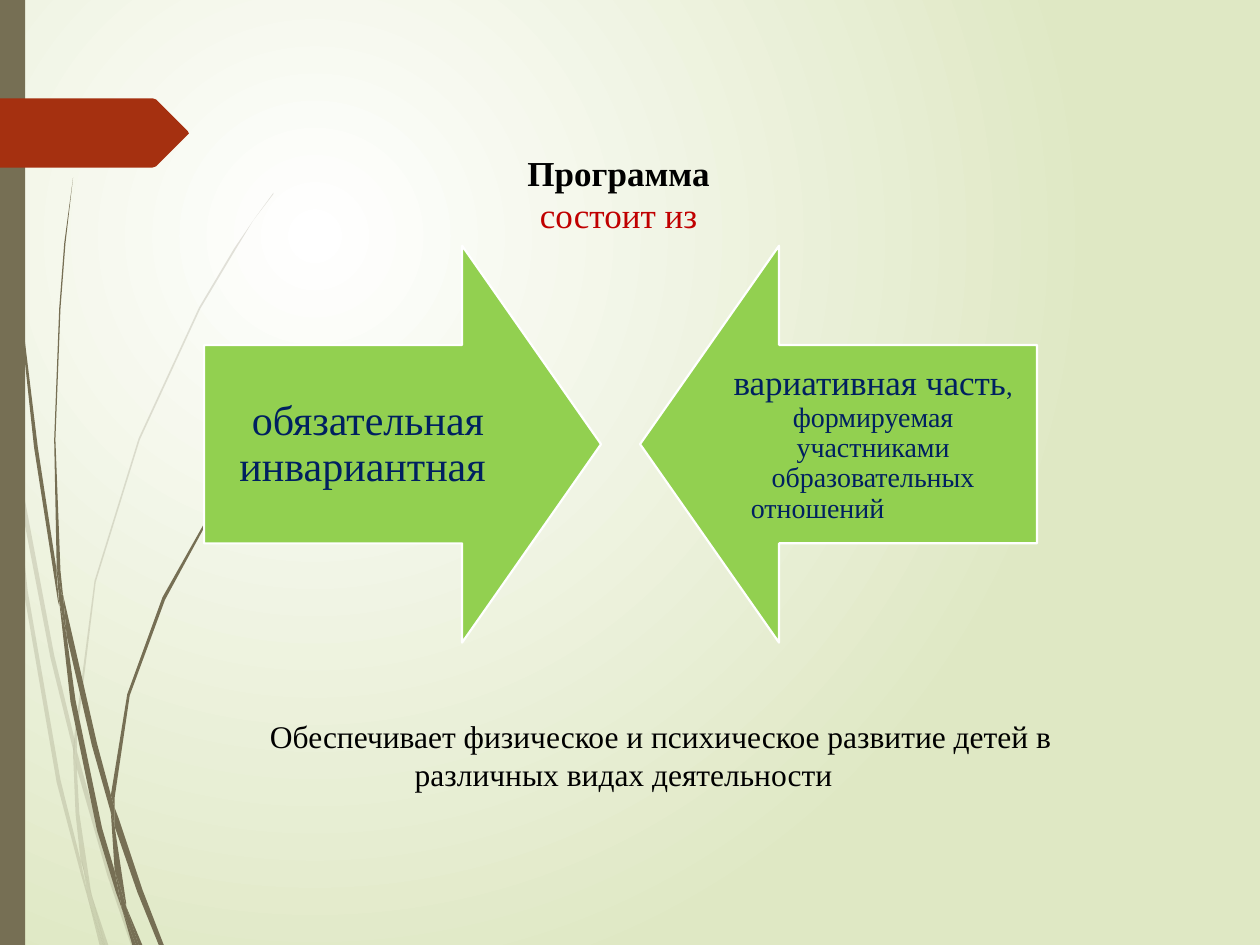
"""Builds the slide about the two parts of the programme."""
from dataclasses import dataclass

from lxml import etree
from pptx import Presentation
from pptx import util as u
from pptx.dml.color import RGBColor
from pptx.enum import shapes, text
from pptx.oxml.ns import qn


@dataclass(frozen=True)
class Theme:
    """Colours, font and type sizes."""
    font: str = "Times New Roman"
    stem: str = "766F54"
    flag: str = "A53010"
    arrow: str = "92D050"
    edge: str = "FFFFFF"
    glow: str = "FFFFFF"
    field: str = "DFE8C4"
    ink: str = "000000"
    accent: str = "C00000"
    navy: str = "002060"
    large: int = 24
    heading: int = 20
    note: int = 18
    detail: int = 16
    comma: int = 15


PALE_STEMS = (
    ((.08, 3.5), (.06, 3.22), (0, 2.82), (0, 2.99), (.07, 3.44)),
    ((.4, 5.22), (.59, 5.99), (.59, 5.86), (.43, 5.2), (.1, 3.45), (.12, 3.76)),
    ((.64, 6.07), (.61, 5.96), (.61, 6.1), (.85, 6.94), (1.04, 7.5), (1.08, 7.5), (.88, 6.92)),
    ((.83, 7.5), (.86, 7.5), (.73, 7.11)),
    ((.64, 6.83), (.48, 6.19), (.22, 4.69), (.12, 3.76), (.08, 3.5), (.19, 4.7),
     (.45, 6.21), (.64, 6.93), (.7, 7.14), (.69, 7.07)),
    ((.58, 5.99), (.6, 6.46), (.64, 6.83), (.67, 6.92), (.73, 7.11), (.72, 7.06),
     (.63, 6.46), (.61, 6.1), (.61, 6.08)),
    ((.61, 5.84), (.76, 4.62), (1.11, 3.49), (1.59, 2.45), (1.87, 1.98), (2.01, 1.75),
     (2.17, 1.54), (2.17, 1.53), (2.01, 1.75), (1.86, 1.97), (1.58, 2.44), (1.1, 3.48),
     (.75, 4.61), (.59, 5.84), (.59, 5.86), (.61, 5.96)),
    ((.7, 7.14), (.79, 7.5), (.82, 7.5)),
    ((.61, 6.08), (.61, 6.1), (.61, 5.96), (.59, 5.86), (.58, 5.99)),
    ((.67, 6.92), (.65, 6.83), (.69, 7.07), (.7, 7.14), (.82, 7.5), (.83, 7.5), (.73, 7.11)),
)
DARK_STEMS = (
    ((.05, 1.1), (.14, 2.33), (.27, 3.55), (.46, 4.77), (.47, 4.81), (.45, 4.57), (.45, 4.53),
     (.3, 3.55), (.15, 2.32), (.06, 1.09), (.04, .48), (.03, 0), (.02, 0), (.03, .48)),
    ((.73, 5.92), (.88, 6.45), (.88, 6.31), (.77, 5.9), (.5, 4.72), (.53, 5.05)),
    ((.94, 6.49), (.91, 6.41), (.91, 6.56), (1.09, 7.08), (1.26, 7.5), (1.3, 7.5), (1.13, 7.06)),
    ((.91, 6.91), (.81, 6.57), (.6, 5.56), (.53, 5.05), (.47, 4.77), (.56, 5.57),
     (.77, 6.59), (.92, 7.08), (.97, 7.22), (.96, 7.17)),
    ((.5, 4.72), (.48, 4.53), (.44, 3.49), (.48, 2.45), (.52, 1.93), (.58, 1.41),
     (.51, 1.93), (.47, 2.45), (.43, 3.49), (.45, 4.49), (.49, 4.72)),
    ((1.1, 7.5), (1.13, 7.5), (1, 7.19)),
    ((.47, 4.77), (.53, 5.05), (.5, 4.72), (.49, 4.72), (.45, 4.49), (.45, 4.53)),
    ((.91, 6.33), (1.03, 5.52), (1.31, 4.76), (1.69, 4.06), (1.91, 3.74), (2.03, 3.59),
     (2.16, 3.44), (2.15, 3.44), (2.03, 3.58), (1.91, 3.73), (1.68, 4.05), (1.29, 4.74),
     (1.01, 5.51), (.88, 6.31), (.91, 6.41)),
    ((.97, 7.22), (1.05, 7.5), (1.08, 7.5)),
    ((.88, 6.45), (.91, 6.91), (.96, 7.06), (1, 7.19), (1, 7.16), (.91, 6.56), (.9, 6.51)),
    ((.88, 6.45), (.9, 6.51), (.91, 6.56), (.91, 6.41), (.88, 6.31)),
    ((.96, 7.06), (.91, 6.91), (.96, 7.17), (.97, 7.22), (1.08, 7.5), (1.1, 7.5), (1, 7.19)),
)
FLAG = ((0, .78), (1.21, .78), (1.24, .79), (1.49, 1.04), (1.5, 1.06), (1.49, 1.07),
        (1.24, 1.32), (1.21, 1.33), (0, 1.33))


class SlideBuilder:
    """Holds the theme and the current slide."""

    def __init__(self, slide, theme):
        self.slide = slide
        self.theme = theme

    def apply(self, target, values):
        """Sets each named format value on the target."""
        for name, value in values.items():
            setattr(target, name, value)

    def background(self):
        """Fills the slide with a round glow."""
        fill = self.slide.background.fill
        fill.gradient()
        for stop, colour in zip(fill.gradient_stops, (self.theme.glow, self.theme.field)):
            stop.color.rgb = RGBColor.from_string(colour)
        gradient = self.slide.element.find(".//" + qn("a:gradFill"))
        gradient.remove(gradient.find(qn("a:lin")))
        circle = etree.SubElement(gradient, qn("a:path"), {"path": "circle"})
        etree.SubElement(circle, qn("a:fillToRect"),
                         {"l": "50000", "t": "50000", "r": "100000", "b": "100000"})

    def paint(self, shape, colour, opacity=100, edge=None):
        """Gives a shape its fill and line."""
        shape.shadow.inherit = False
        shape.fill.solid()
        shape.fill.fore_color.rgb = RGBColor.from_string(colour)
        if opacity < 100:
            tint = shape.element.spPr.find(".//" + qn("a:srgbClr"))
            etree.SubElement(tint, qn("a:alpha"), {"val": str(opacity * 1000)})
        if edge:
            shape.line.color.rgb = RGBColor.from_string(edge)
            shape.line.width = u.Pt(1.25)
        else:
            shape.line.fill.background()

    def outline(self, points, colour, opacity=100):
        """Draws a closed outline through points in inches."""
        start, *rest = [(u.Inches(x), u.Inches(y)) for x, y in points]
        pen = self.slide.shapes.build_freeform(*start)
        pen.add_line_segments(rest, close=True)
        self.paint(pen.convert_to_shape(), colour, opacity)

    def preset(self, kind, box, colour, rotation=0, adjustments=(), edge=None):
        """Draws a preset shape."""
        shape = self.slide.shapes.add_shape(kind, *map(u.Inches, box))
        shape.rotation = rotation
        for index, value in enumerate(adjustments):
            shape.adjustments[index] = value
        self.paint(shape, colour, edge=edge)

    def fill_text(self, holder, paragraphs, inset=None, **frame_format):
        """Sets paragraphs of (runs, paragraph format, left margin, first indent)."""
        frame = holder.text_frame
        self.apply(frame, {"word_wrap": True, **frame_format})
        if inset is not None:
            self.apply(frame, {f"margin_{side}": u.Inches(inset)
                               for side in ("left", "top", "right", "bottom")})
        for index, (runs, layout, margin, indent) in enumerate(paragraphs):
            paragraph = frame.add_paragraph() if index else frame.paragraphs[0]
            self.apply(paragraph, {"alignment": text.PP_ALIGN.CENTER, **layout})
            properties = paragraph._p.get_or_add_pPr()
            properties.set("marL", str(u.Inches(margin)))
            properties.set("indent", str(u.Inches(indent)))
            for words, size, colour, bold in runs:
                run = paragraph.add_run()
                run.text = words
                self.apply(run.font, {"name": self.theme.font, "size": u.Pt(size), "bold": bold})
                run.font.color.rgb = RGBColor.from_string(colour)

    def title(self, box, paragraphs, **frame_format):
        """Moves and fills the title placeholder."""
        heading = self.slide.shapes.title
        self.apply(heading, dict(zip(("left", "top", "width", "height"), map(u.Inches, box))))
        self.fill_text(heading, paragraphs, **frame_format)

    def label(self, box, paragraphs, **options):
        """Adds a text box."""
        self.fill_text(self.slide.shapes.add_textbox(*map(u.Inches, box)), paragraphs, **options)


def main():
    """Builds and saves the slide."""
    deck = Presentation()
    deck.slide_width, deck.slide_height = u.Inches(10), u.Inches(7.5)
    theme = Theme()
    page = SlideBuilder(deck.slides.add_slide(deck.slide_layouts[5]), theme)
    page.background()
    for stems, opacity in ((PALE_STEMS, 20), (DARK_STEMS, 100)):
        for stem in stems:
            page.outline(stem, theme.stem, opacity)
    page.preset(shapes.MSO_SHAPE.RECTANGLE, (0, 0, .2, 7.5), theme.stem)
    page.outline(FLAG, theme.flag)

    page.title((4.08, 1.15, 1.73, .77), [
        ([("Программа ", theme.heading, theme.ink, True)], {}, 0, 0),
        ([("состоит из ", theme.heading, theme.accent, False)], {}, 0, 0),
    ], word_wrap=False, vertical_anchor=text.MSO_ANCHOR.TOP,
        auto_size=text.MSO_AUTO_SIZE.SHAPE_TO_FIT_TEXT)

    tight = {"line_spacing": .9}
    required = [([("обязательная инвариантная ", theme.large, theme.navy, False)], tight, 0, 0)]
    variable = [
        ([("вариативная часть", theme.heading, theme.navy, False),
          (", ", theme.comma, theme.navy, False),
          ("формируемая участниками образовательных", theme.detail, theme.navy, False)],
         tight, 0, 0),
        ([("отношений", theme.detail, theme.navy, False)],
         {**tight, "alignment": text.PP_ALIGN.LEFT}, .17, 0),
    ]
    for arrow_left, rotation, label_left, inset, part in (
            (1.62, 270, 1.62, .19, required), (5.08, 90, 5.63, .16, variable)):
        page.preset(shapes.MSO_SHAPE.DOWN_ARROW, (arrow_left, 1.95, 3.15, 3.15), theme.arrow,
                    rotation, (.5, .35), theme.edge)
        page.label((label_left, 2.74, 2.6, 1.58), part, inset=inset,
                   vertical_anchor=text.MSO_ANCHOR.MIDDLE)

    page.label((1.17, 5.64, 7.56, .71), [
        ([("Обеспечивает физическое и психическое развитие детей в различных видах деятельности",
           theme.note, theme.ink, False)], {}, 0, .59),
    ], auto_size=text.MSO_AUTO_SIZE.SHAPE_TO_FIT_TEXT)
    deck.save("out.pptx")


if __name__ == "__main__":
    main()
